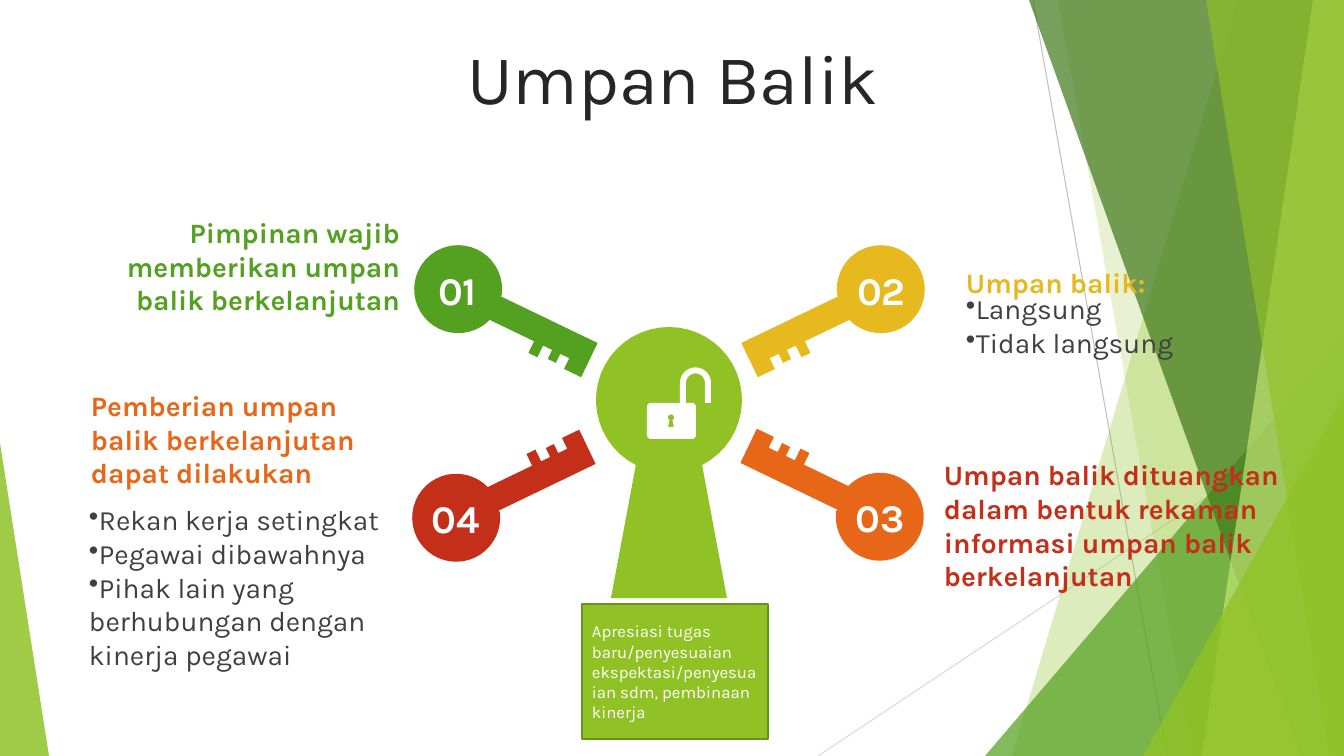
"""Build the "Umpan Balik" slide: four keys around a keyhole."""
from math import cos, radians, sin

from lxml import etree
from pptx import Presentation
from pptx.dml.color import RGBColor
from pptx.enum import shapes, text
from pptx.oxml.ns import qn
from pptx.util import Pt

PX = 12192000 / 1344
WIDTH, HEIGHT = 1344, 756
FONT = "Karla"
LIME, GREEN, YELLOW, ORANGE, RED = "90C226", "54A021", "E6B91E", "E76618", "C42F1A"
WHITE, GREY = "FFFFFF", "404040"
LEFT, CENTER, RIGHT = text.PP_ALIGN.LEFT, text.PP_ALIGN.CENTER, text.PP_ALIGN.RIGHT
TOP, MIDDLE = text.MSO_ANCHOR.TOP, text.MSO_ANCHOR.MIDDLE

TITLE = ("Umpan Balik", (35, 37, 1276, 80))
RAYS = [((1033, 0, 1167, 756), "BFBFBF"), ((1344, 406, 818, 756), "D9D9D9")]
# kind, geometry (top x and bottom x, or box and apex), colour, opacity
FACETS = [
    ("band", (1238, 1012), LIME, 30),
    ("band", (1058, 1192), LIME, 20),
    ("triangle", (985, 336, 359, 420, 1), GREEN, 72),
    ("band", (1029, 1301), "3F7819", 70),
    ("band", (1313, 1202), "C0E474", 70),
    ("band", (1206, 1329), LIME, 65),
    ("triangle", (1143, 396, 201, 360, 1), LIME, 80),
    ("triangle", (0, 443, 49, 313, 0), LIME, 85),
]
KEY_SIZE = (193, 88)
KEY_TILT = 25.7
KEY_BIT = [(85, 32), (193, 32), (193, 70), (174, 70), (174, 58), (164, 58), (164, 68),
           (155, 68), (155, 58), (145, 58), (145, 71), (135, 71), (135, 58), (85, 58)]
# label, key corner, label corner, mirrored across, mirrored down, colour
KEYS = [
    ("01", (409, 268), (420, 261), False, False, GREEN),
    ("02", (737, 268), (844, 261), True, False, YELLOW),
    ("03", (736, 450), (843, 488), True, True, ORANGE),
    ("04", (407, 451), (418, 489), False, True, RED),
]
# lines, box, colour, bold, bulleted, alignment, anchor
NOTES = [
    (["Langsung", "Tidak langsung"], (956, 287, 328, 78), GREY, False, True, LEFT, TOP),
    (["Umpan balik:"], (956, 260, 328, 44), YELLOW, True, False, LEFT, MIDDLE),
    (["Rekan kerja setingkat", "Pegawai dibawahnya",
      "Pihak lain yang berhubungan dengan kinerja pegawai"],
     (79, 498, 328, 179), GREY, False, True, LEFT, TOP),
    (["Pemberian umpan balik berkelanjutan dapat dilakukan"],
     (81, 383, 328, 112), ORANGE, True, False, LEFT, MIDDLE),
    (["Pimpinan wajib memberikan umpan balik berkelanjutan"],
     (78, 210, 332, 112), GREEN, True, False, RIGHT, MIDDLE),
    (["Umpan balik dituangkan dalam bentuk rekaman informasi umpan balik berkelanjutan"],
     (934, 452, 388, 146), RED, True, False, LEFT, MIDDLE),
]
OUTCOME = ("Apresiasi tugas baru/penyesuaian ekspektasi/penyesuaian sdm, pembinaan kinerja",
           (582, 604, 186, 135))


def emu(*lengths):
    return [round(length * PX) for length in lengths]


def colour(hex_string):
    return RGBColor.from_string(hex_string)


def arc(x, y, radius, start, end, steps=40):
    angles = [radians(start + (end - start) * step / steps) for step in range(steps + 1)]
    return [(x + radius * cos(angle), y + radius * sin(angle)) for angle in angles]


def paint(shape, fill, opacity=100):
    shape.shadow.inherit = False
    shape.fill.solid()
    shape.fill.fore_color.rgb = colour(fill)
    shape.line.fill.background()
    if opacity < 100:
        tint = shape._element.spPr.find(qn("a:solidFill"))[0]
        etree.SubElement(tint, qn("a:alpha")).set("val", str(opacity * 1000))
    return shape


def outline(slide, contours, fill, opacity=100):
    builder = None
    for contour in contours:
        first, *rest = [emu(*point) for point in contour]
        if builder is None:
            builder = slide.shapes.build_freeform(*first, scale=1.0)
        else:
            builder.move_to(*first)
        builder.add_line_segments(rest, close=True)
    return paint(builder.convert_to_shape(), fill, opacity)


def write(shape, lines, size, hex_string, bold=False, bulleted=False, align=LEFT, anchor=MIDDLE):
    frame = shape.text_frame
    frame.word_wrap = True
    frame.vertical_anchor = anchor
    for index, line in enumerate(lines):
        paragraph = frame.add_paragraph() if index else frame.paragraphs[0]
        paragraph.alignment = align
        if bulleted:
            properties = paragraph._p.get_or_add_pPr()
            properties.set("marL", "0")
            properties.set("indent", "0")
            etree.SubElement(properties, qn("a:buChar")).set("char", "•")
        run = paragraph.add_run()
        run.text = line
        run.font.name, run.font.size, run.font.bold = FONT, Pt(size), bold
        run.font.color.rgb = colour(hex_string)


def add_text(slide, box, *args, **options):
    shape = slide.shapes.add_textbox(*emu(*box))
    write(shape, *args, **options)
    shape.text_frame.auto_size = text.MSO_AUTO_SIZE.SHAPE_TO_FIT_TEXT


def add_background(slide):
    for ends, hex_string in RAYS:
        ray = slide.shapes.add_connector(shapes.MSO_CONNECTOR.STRAIGHT, *emu(*ends))
        ray.line.color.rgb = colour(hex_string)
        ray.line.width = Pt(0.75)
        etree.SubElement(ray._element.spPr, qn("a:effectLst"))
    for kind, geometry, fill, opacity in FACETS:
        if kind == "band":
            top, bottom = geometry
            corners = [(top, 0), (WIDTH, 0), (WIDTH, HEIGHT), (bottom, HEIGHT)]
            outline(slide, [corners], fill, opacity)
        else:
            *box, apex = geometry
            triangle = slide.shapes.add_shape(shapes.MSO_SHAPE.ISOSCELES_TRIANGLE, *emu(*box))
            triangle.adjustments[0] = apex
            paint(triangle, fill, opacity)


def add_keyhole(slide):
    outline(slide, [arc(669, 400, 73, 117, 423) + [(727, 598), (611, 598)]], LIME)


def add_keys(slide):
    width, height = KEY_SIZE
    key = KEY_BIT + arc(44, 44, 44, 18, 342)
    for _, (left, top), _, across, down, fill in KEYS:
        points = [(left + (width - x if across else x), top + (height - y if down else y))
                  for x, y in key]
        shape = outline(slide, [points], fill)
        shape.rotation = KEY_TILT if across == down else 360 - KEY_TILT
    for label, _, corner, *_ in KEYS:
        add_text(slide, (*corner, 75, 57), [label], 28, WHITE, bold=True, align=CENTER)


def add_lock(slide):
    slot = arc(671, 417.5, 3, 120, 420) + [(674, 427), (668, 427)]
    shackle = (arc(695.5, 383, 15.5, 180, 360) + [(711, 403), (705, 403)]
               + arc(695.5, 383, 9.5, 360, 180) + [(686, 403)])
    body = [point for x, y, start in [(692, 407, 270), (692, 435, 0), (651, 435, 90), (651, 407, 180)]
            for point in arc(x, y, 4, start, start + 90, 8)]
    outline(slide, [slot, shackle + body + [(680, 403)]], WHITE)


def main():
    presentation = Presentation()
    presentation.slide_width, presentation.slide_height = emu(WIDTH, HEIGHT)
    slide = presentation.slides.add_slide(presentation.slide_layouts[5])
    heading, box = TITLE
    title = slide.shapes.title
    title.left, title.top, title.width, title.height = emu(*box)
    write(title, [heading], 50, "262626", align=CENTER)
    add_background(slide)
    add_keyhole(slide)
    add_keys(slide)
    for lines, box, hex_string, bold, bulleted, align, anchor in NOTES:
        add_text(slide, box, lines, 20, hex_string, bold, bulleted, align, anchor)
    add_lock(slide)
    sentence, box = OUTCOME
    outcome = paint(slide.shapes.add_shape(shapes.MSO_SHAPE.RECTANGLE, *emu(*box)), LIME)
    outcome.line.color.rgb = colour("6B901C")
    outcome.line.width = Pt(1.5)
    write(outcome, [sentence], 12, WHITE)
    presentation.save("out.pptx")


if __name__ == "__main__":
    main()
